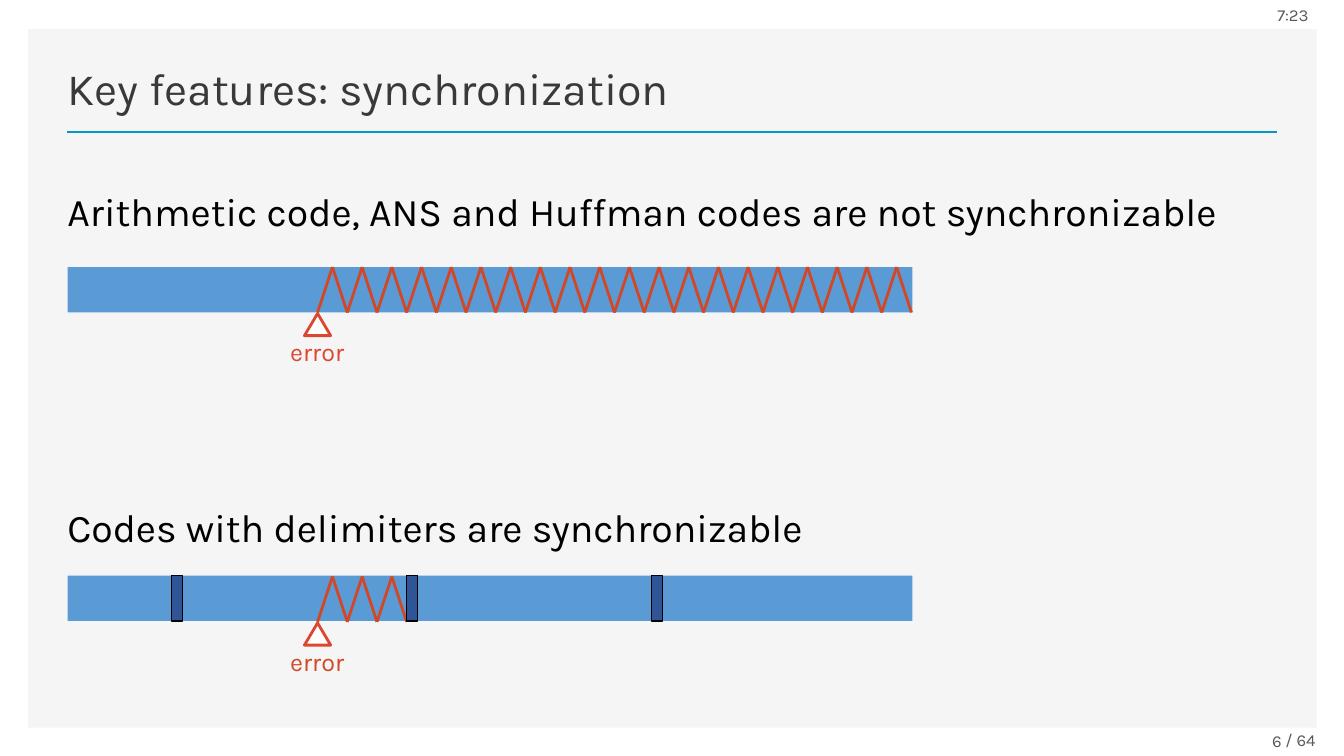
from lxml import etree
from pptx import Presentation
from pptx import util as u
from pptx.dml import color
from pptx.enum import shapes, text
from pptx.oxml import ns

COLORS = {
    "panel": "F5F5F5",
    "rule": "009BC0",
    "title": "3B3838",
    "body": "000000",
    "bar": "5B9BD5",
    "zigzag": "D24726",
    "error": "DD462F",
    "white": "FFFFFF",
    "mark": "2F5597",
    "small": "595959",
}
FONT = "Karla"
BAR_LEFT, BAR_WIDTH, BAR_HEIGHT = 0.67, 8.38, 0.45
ERROR_X = 3.15
STEP = 5.89 / 40


def rgb(name):
    return color.RGBColor.from_string(COLORS[name])


def add_text(slide, box, words, size, tint,
             anchor=text.MSO_ANCHOR.TOP, align=text.PP_ALIGN.LEFT):
    label = slide.shapes.add_textbox(*map(u.Inches, box))
    frame = label.text_frame
    frame.word_wrap = True
    frame.vertical_anchor = anchor
    frame.text = words
    para = frame.paragraphs[0]
    para.alignment = align
    font = para.runs[0].font
    font.name = FONT
    font.size = u.Pt(size)
    font.color.rgb = rgb(tint)


def add_block(slide, kind, box, fill, line=None, width=1):
    block = slide.shapes.add_shape(kind, *map(u.Inches, box))
    block.shadow.inherit = False
    block.fill.solid()
    block.fill.fore_color.rgb = rgb(fill)
    if line:
        block.line.color.rgb = rgb(line)
        block.line.width = u.Pt(width)
    else:
        block.line.fill.background()


def add_line(slide, start, end, tint):
    line = slide.shapes.add_connector(
        shapes.MSO_CONNECTOR.STRAIGHT, *map(u.Inches, start + end))
    line.line.color.rgb = rgb(tint)
    line.line.width = u.Pt(2)
    etree.SubElement(line._element.spPr, ns.qn("a:effectLst"))


def add_zigzag(slide, top, count):
    levels = (top + BAR_HEIGHT, top)
    points = [(ERROR_X + i * STEP, levels[i % 2]) for i in range(count + 1)]
    for start, end in zip(points, points[1:]):
        add_line(slide, start, end, "zigzag")


def add_error(slide, top, tint):
    add_block(slide, shapes.MSO_SHAPE.ISOSCELES_TRIANGLE,
              (ERROR_X - 0.13, top, 0.26, 0.22), "white", "error", 2)
    add_text(slide, (2.78, top + 0.18, 1.46, 0.4), "error", 18, tint)


def add_code(slide, words, top, bar_top, zig_top, count, tint):
    add_text(slide, (0.57, top, 12.09, 0.57), words, 28, "body")
    add_block(slide, shapes.MSO_SHAPE.RECTANGLE,
              (BAR_LEFT, bar_top, BAR_WIDTH, BAR_HEIGHT), "bar")
    add_zigzag(slide, zig_top, count)
    add_error(slide, zig_top + 0.46, tint)


def main():
    deck = Presentation()
    deck.slide_width = u.Inches(13.33)
    deck.slide_height = u.Inches(7.5)
    slide = deck.slides.add_slide(deck.slide_layouts[6])
    middle = text.MSO_ANCHOR.MIDDLE

    add_block(slide, shapes.MSO_SHAPE.RECTANGLE,
              (0.28, 0.29, 12.78, 6.93), "panel")
    add_line(slide, (0.66, 1.31), (12.67, 1.31), "rule")
    add_text(slide, (0.57, 0.49, 8.8, 0.7), "Key features: synchronization",
             32, "title", text.MSO_ANCHOR.BOTTOM)

    add_code(slide,
             "Arithmetic code, ANS and Huffman codes are not synchronizable",
             1.81, 2.65, 2.65, 40, "error")
    add_code(slide, "Codes with delimiters are synchronizable",
             4.94, 5.71, 5.72, 6, "zigzag")
    for left in (1.7, 4.03, 6.46):
        add_block(slide, shapes.MSO_SHAPE.RECTANGLE,
                  (left, 5.71, 0.11, BAR_HEIGHT), "mark", "body")

    add_text(slide, (9.23, 7.15, 3.58, 0.4), "6", 12, "small",
             middle, text.PP_ALIGN.RIGHT)
    add_text(slide, (12.65, 7.19, 0.8, 0.3), "/ 64", 12, "small")
    add_text(slide, (12.57, -0.05, 0.76, 0.4), "7:23", 12, "small", middle)
    deck.save("out.pptx")


if __name__ == "__main__":
    main()
